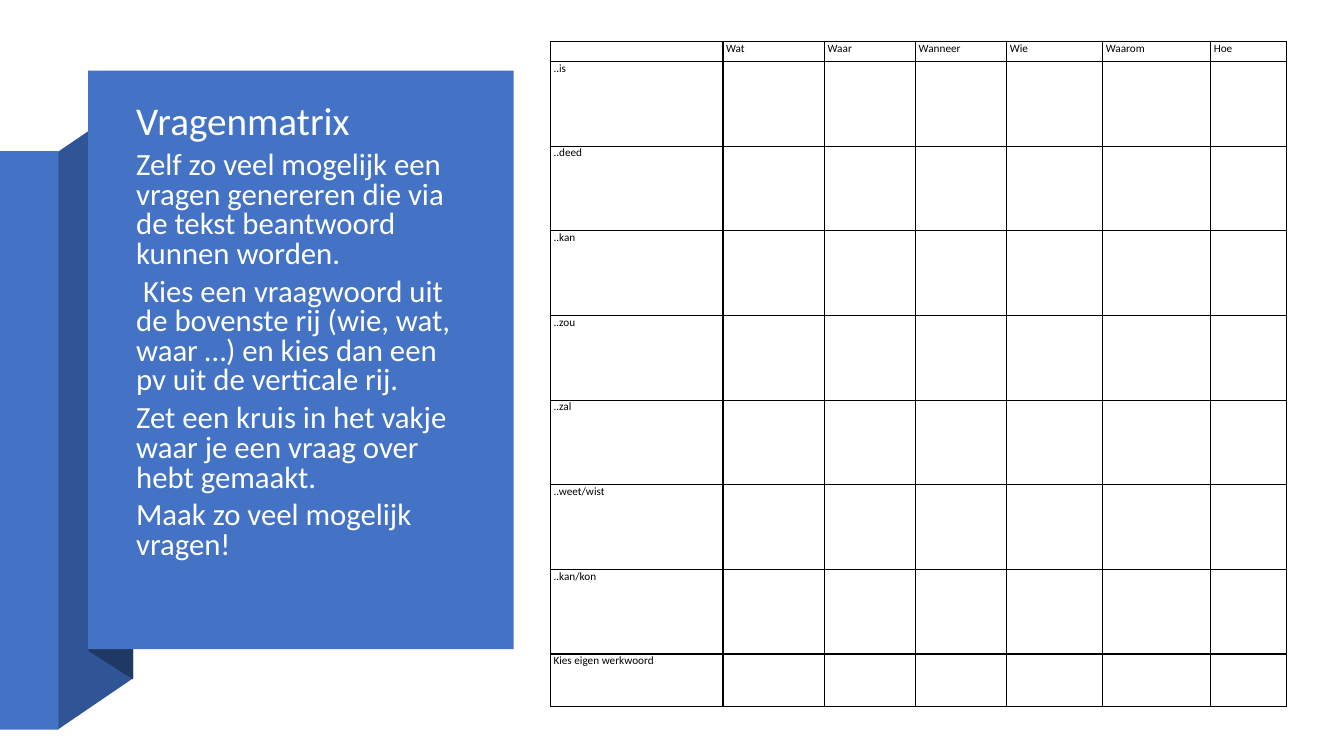
"""Build the Vragenmatrix slide: a folded ribbon with instructions beside a question grid."""
import dataclasses
import typing

import lxml.etree
import pptx
import pptx.dml.color
import pptx.enum.shapes
import pptx.enum.text
import pptx.oxml.ns
import pptx.util

Point = tuple[float, float]


@dataclasses.dataclass(frozen=True)
class Theme:
    """Colours, typeface and type sizes of the slide."""
    blue: str = "4472C4"
    fold: str = "2F5597"
    shade: str = "203864"
    light: str = "FEFFFF"
    ink: str = "000000"
    font: str = "Calibri"
    heading: int = 28
    body: int = 22
    cell: int = 8


@dataclasses.dataclass(frozen=True)
class Box:
    """A rectangle in percentages of the slide's width and height."""
    left: float
    top: float
    width: float
    height: float

    def emu(self) -> tuple[int, int, int, int]:
        """Return left, top, width and height in EMU."""
        return across(self.left), down(self.top), across(self.width), down(self.height)


@dataclasses.dataclass(frozen=True)
class Panel:
    """A filled ribbon part, given as a box or as the corners of an outline."""
    outline: Box | tuple[Point, ...]
    color: str


THEME = Theme()
WIDTH = pptx.util.Inches(13.33)
HEIGHT = pptx.util.Inches(7.5)

RIBBON = (
    Panel(((4.28, 96.53), (9.9, 89.73), (9.9, 13.33), (4.28, 20.13)), THEME.fold),
    Panel(Box(0, 20, 4.35, 76.53), THEME.blue),
    Panel(((6.6, 86.13), (9.9, 89.87), (9.9, 13.2), (6.6, 9.33)), THEME.shade),
    Panel(Box(6.56, 9.33, 31.66, 76.53), THEME.blue),
)
TEXT_BOX = Box(9.38, 13.33, 26.26, 69.2)
HEADING = "Vragenmatrix"
INSTRUCTIONS = (
    "Zelf zo veel mogelijk een vragen genereren die via de tekst beantwoord kunnen worden.",
    " Kies een vraagwoord uit de bovenste rij (wie, wat, waar …) en kies dan een pv uit de verticale rij.",
    "Zet een kruis in het vakje waar je een vraag over hebt gemaakt.",
    "Maak zo veel mogelijk vragen!",
)

QUESTIONS = ("", "Wat", "Waar", "Wanneer", "Wie", "Waarom", "Hoe")
VERBS = ("..is", "..deed", "..kan", "..zou", "..zal", "..weet/wist", "..kan/kon", "Kies eigen werkwoord")
COLUMNS = (12.84, 7.56, 6.78, 6.78, 7.14, 8.04, 5.65)
ROWS = (2.67, *[11.2] * 7, 6.93)
MATRIX = Box(40.96, 5.47, sum(COLUMNS), sum(ROWS))


def across(share: float) -> int:
    """Turn a percentage of the slide width into EMU."""
    return round(WIDTH * share / 100)


def down(share: float) -> int:
    """Turn a percentage of the slide height into EMU."""
    return round(HEIGHT * share / 100)


def write(tf: typing.Any, text: str, *, size: int, color: str,
          line_spacing: float | None = None, after: int = 0) -> None:
    """Add one formatted, left-aligned paragraph to a text frame."""
    p = tf.add_paragraph() if tf.text else tf.paragraphs[0]
    p.alignment = pptx.enum.text.PP_ALIGN.LEFT
    p.line_spacing = line_spacing
    p.space_after = pptx.util.Pt(after)
    if not text:
        lxml.etree.SubElement(p._p, pptx.oxml.ns.qn("a:endParaRPr"), sz=str(size * 100))
        return
    r = p.add_run()
    r.text = text
    r.font.name = THEME.font
    r.font.size = pptx.util.Pt(size)
    r.font.color.rgb = pptx.dml.color.RGBColor.from_string(color)


def draw_panel(s: typing.Any, panel: Panel) -> None:
    """Draw one ribbon part."""
    if isinstance(panel.outline, Box):
        sp = s.shapes.add_shape(pptx.enum.shapes.MSO_SHAPE.RECTANGLE, *panel.outline.emu())
    else:
        start, *corners = [(across(x), down(y)) for x, y in panel.outline]
        builder = s.shapes.build_freeform(*start)
        builder.add_line_segments(corners, close=True)
        sp = builder.convert_to_shape()
    sp.shadow.inherit = False
    sp.fill.solid()
    sp.fill.fore_color.rgb = pptx.dml.color.RGBColor.from_string(panel.color)
    sp.line.fill.background()


def draw_text(s: typing.Any) -> None:
    """Place the heading and instructions in the title placeholder, above the ribbon."""
    sp = s.shapes.title
    sp.element.getparent().append(sp.element)
    sp.left, sp.top, sp.width, sp.height = TEXT_BOX.emu()
    tf = sp.text_frame
    tf.word_wrap = True
    tf.auto_size = pptx.enum.text.MSO_AUTO_SIZE.NONE
    tf.vertical_anchor = pptx.enum.text.MSO_ANCHOR.TOP
    write(tf, HEADING, size=THEME.heading, color=THEME.light, line_spacing=0.8, after=6)
    for text in INSTRUCTIONS:
        write(tf, text, size=THEME.body, color=THEME.light, line_spacing=0.8, after=6)


def add_borders(cell: typing.Any) -> None:
    """Give a cell a one-point line on all four sides."""
    qn = pptx.oxml.ns.qn
    tc_pr = cell._tc.get_or_add_tcPr()
    for i, side in enumerate(("lnL", "lnR", "lnT", "lnB")):
        ln = lxml.etree.Element(qn(f"a:{side}"), w=str(pptx.util.Pt(1)))
        fill = lxml.etree.SubElement(ln, qn("a:solidFill"))
        lxml.etree.SubElement(fill, qn("a:srgbClr"), val=THEME.ink)
        tc_pr.insert(i, ln)


def draw_matrix(s: typing.Any) -> None:
    """Draw the grid of question words and verbs."""
    table = s.shapes.add_table(len(ROWS), len(COLUMNS), *MATRIX.emu()).table
    table.first_row = table.horz_banding = False
    for column, share in zip(table.columns, COLUMNS):
        column.width = across(share)
    for row, share in zip(table.rows, ROWS):
        row.height = down(share)
    blanks = [""] * (len(COLUMNS) - 1)
    lines = [QUESTIONS, *((verb, *blanks) for verb in VERBS)]
    for row, line in zip(table.rows, lines):
        for cell, text in zip(row.cells, line):
            cell.margin_left = cell.margin_right = pptx.util.Inches(0.03)
            cell.margin_top = cell.margin_bottom = 0
            cell.fill.background()
            add_borders(cell)
            write(cell.text_frame, text, size=THEME.cell, color=THEME.ink)


def main() -> None:
    """Build and save the presentation."""
    prs = pptx.Presentation()
    prs.slide_width, prs.slide_height = WIDTH, HEIGHT
    s = prs.slides.add_slide(prs.slide_layouts.get_by_name("Title Only"))
    for panel in RIBBON:
        draw_panel(s, panel)
    draw_text(s)
    draw_matrix(s)
    prs.save("out.pptx")


if __name__ == "__main__":
    main()
